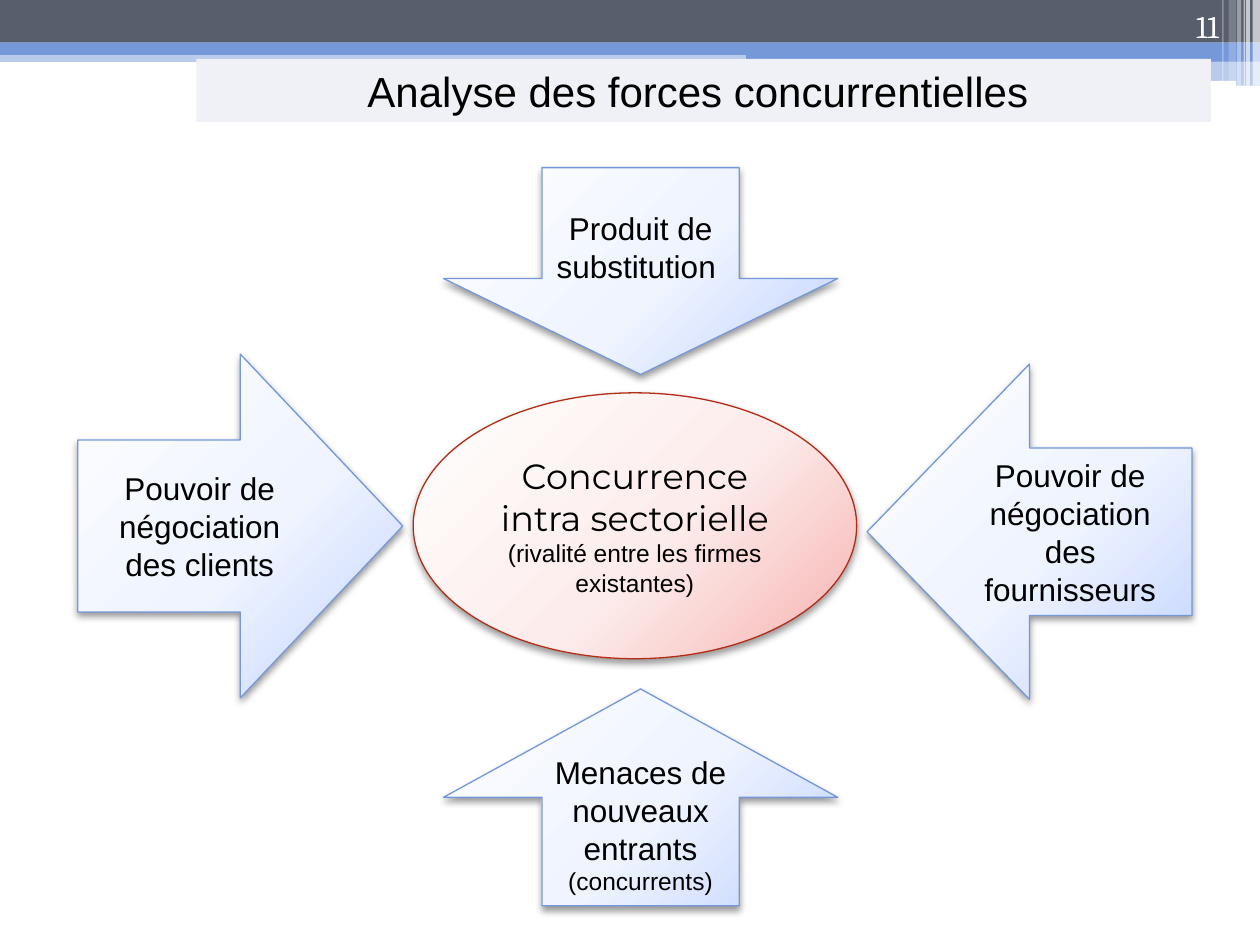
from lxml import etree
from pptx import Presentation
from pptx.dml.color import RGBColor
from pptx.enum.shapes import MSO_SHAPE as SHAPE
from pptx.enum.text import MSO_ANCHOR as ANCHOR, PP_ALIGN as ALIGN
from pptx.oxml import parse_xml
from pptx.oxml.ns import nsdecls, qn
from pptx.util import Cm, Pt

COLORS = {
    "slate": "575F6D", "blue": "7598D9", "white": "FFFFFF", "black": "000000",
    "band": "EFF1F7", "red": "B32C16",
}
BLUE_GRADIENT = ((0, "FEFEFF"), (55, "EFF4FF"), (100, "C0D2FF"))
RED_GRADIENT = ((0, "FFFEFE"), (55, "FCEDEC"), (100, "F6B2B0"))

# Header bars: left, top, width, height (cm), colour, opacity %
BARS = [
    (0, 1.02, 25.4, 0.23, "blue", 50),
    (0, 0, 25.4, 0.86, "slate", 100),
    (0, 0.86, 25.4, 0.25, "blue", 100),
    (15.04, 0.99, 10.36, 0.25, "blue", 100),
    (15.04, 1.22, 10.36, 0.51, "blue", 50),
]
# Vertical stripes at the right edge: left, width, height (cm), opacity %
STRIPES = [
    (25.25, 0.15, 1.73, 65), (25.12, 0.08, 1.73, 65), (25.07, 0.03, 1.73, 60),
    (24.94, 0.08, 1.73, 40), (24.77, 0.15, 1.63, 20), (24.64, 0.03, 1.63, 30),
]
TITLE = ("Analyse des forces concurrentielles ", 24, "Arial")
PAGE_NUMBER = ("11", 18, "Cambria")

# Forces: shape, box (cm), adjustments, gradient, line, paragraphs
FORCES = [
    (SHAPE.DOWN_ARROW, (8.94, 3.38, 7.95, 4.17), (0.5, 0.464), BLUE_GRADIENT, "blue",
     [("Produit de substitution ", 18, "Arial")]),
    (SHAPE.UP_ARROW, (8.94, 13.89, 7.95, 4.37), (), BLUE_GRADIENT, "blue",
     [("Menaces de nouveaux entrants", 18, "Arial"), ("(concurrents)", 14, "Arial")]),
    (SHAPE.RIGHT_ARROW, (1.57, 7.14, 6.55, 6.93), (), BLUE_GRADIENT, "blue",
     [("Pouvoir de négociation des clients", 18, "Arial")]),
    (SHAPE.LEFT_ARROW, (17.48, 7.34, 6.55, 6.76), (), BLUE_GRADIENT, "blue",
     [("Pouvoir de négociation des fournisseurs", 18, "Arial")]),
    (SHAPE.OVAL, (8.33, 7.92, 8.94, 5.36), (), RED_GRADIENT, "red",
     [("Concurrence intra sectorielle", 20, "Montserrat"),
      ("(rivalité entre les firmes existantes)", 14, "Arial")]),
]


def rgb(name):
    return RGBColor.from_string(COLORS[name])


def add_shape(s, kind, box):
    sp = s.shapes.add_shape(kind, *map(Cm, box))
    sp.shadow.inherit = False
    return sp


def add_block(s, box, color, opacity=100, kind=SHAPE.RECTANGLE):
    sp = add_shape(s, kind, box)
    sp.fill.solid()
    sp.fill.fore_color.rgb = rgb(color)
    sp.line.fill.background()
    if opacity < 100:
        clr = sp.fill._xPr.find(qn("a:solidFill"))[0]
        etree.SubElement(clr, qn("a:alpha")).set("val", str(opacity * 1000))
    return sp


def set_text(sp, paragraphs, align, anchor, color="black"):
    tf = sp.text_frame
    tf.word_wrap = True
    tf.vertical_anchor = anchor
    for i, (text, size, font) in enumerate(paragraphs):
        p = tf.add_paragraph() if i else tf.paragraphs[0]
        p.alignment = align
        r = p.add_run()
        r.text = text
        r.font.size = Pt(size)
        r.font.name = font
        r.font.color.rgb = rgb(color)


def set_gradient(sp, stops):
    gs = "".join(f'<a:gs pos="{pos * 1000}"><a:srgbClr val="{c}"/></a:gs>' for pos, c in stops)
    grad = parse_xml(
        f'<a:gradFill {nsdecls("a")} rotWithShape="1"><a:gsLst>{gs}</a:gsLst>'
        '<a:path path="circle"><a:fillToRect l="-40000" t="-90000" r="140000" b="190000"/>'
        '</a:path></a:gradFill>')
    sp._element.spPr.find(qn("a:prstGeom")).addnext(grad)


def set_shadow(sp):
    effects = sp._element.spPr.find(qn("a:effectLst"))
    effects.append(parse_xml(
        f'<a:outerShdw {nsdecls("a")} blurRad="{Pt(4.1)}" dist="{Pt(2)}" dir="5400000" '
        'rotWithShape="0"><a:srgbClr val="000000"><a:alpha val="40000"/></a:srgbClr>'
        '</a:outerShdw>'))


def main():
    prs = Presentation()
    prs.slide_width, prs.slide_height = Cm(25.4), Cm(19.05)
    s = prs.slides.add_slide(prs.slide_layouts[6])

    # Header decoration
    for *box, color, opacity in BARS:
        add_block(s, box, color, opacity)
    add_block(s, (20.47, 1.63, 4.45, 0.1), "white", kind=SHAPE.ROUNDED_RECTANGLE)
    for left, width, height, opacity in STRIPES:
        add_block(s, (left, 0, width, height), "white", opacity)

    # Title band
    band = add_block(s, (3.96, 1.19, 20.45, 1.27), "band")
    set_text(band, [TITLE], ALIGN.CENTER, ANCHOR.TOP)

    # Four forces around the central rivalry
    for kind, box, adjustments, gradient, line, paragraphs in FORCES:
        sp = add_shape(s, kind, box)
        for i, value in enumerate(adjustments):
            sp.adjustments[i] = value
        set_gradient(sp, gradient)
        sp.line.color.rgb = rgb(line)
        sp.line.width = Pt(0.75)
        set_shadow(sp)
        set_text(sp, paragraphs, ALIGN.CENTER, ANCHOR.MIDDLE)

    # Page number
    number = s.shapes.add_textbox(*map(Cm, (22.71, 0, 2.11, 1.02)))
    set_text(number, [PAGE_NUMBER], ALIGN.RIGHT, ANCHOR.BOTTOM, "white")

    prs.save("out.pptx")


if __name__ == "__main__":
    main()
